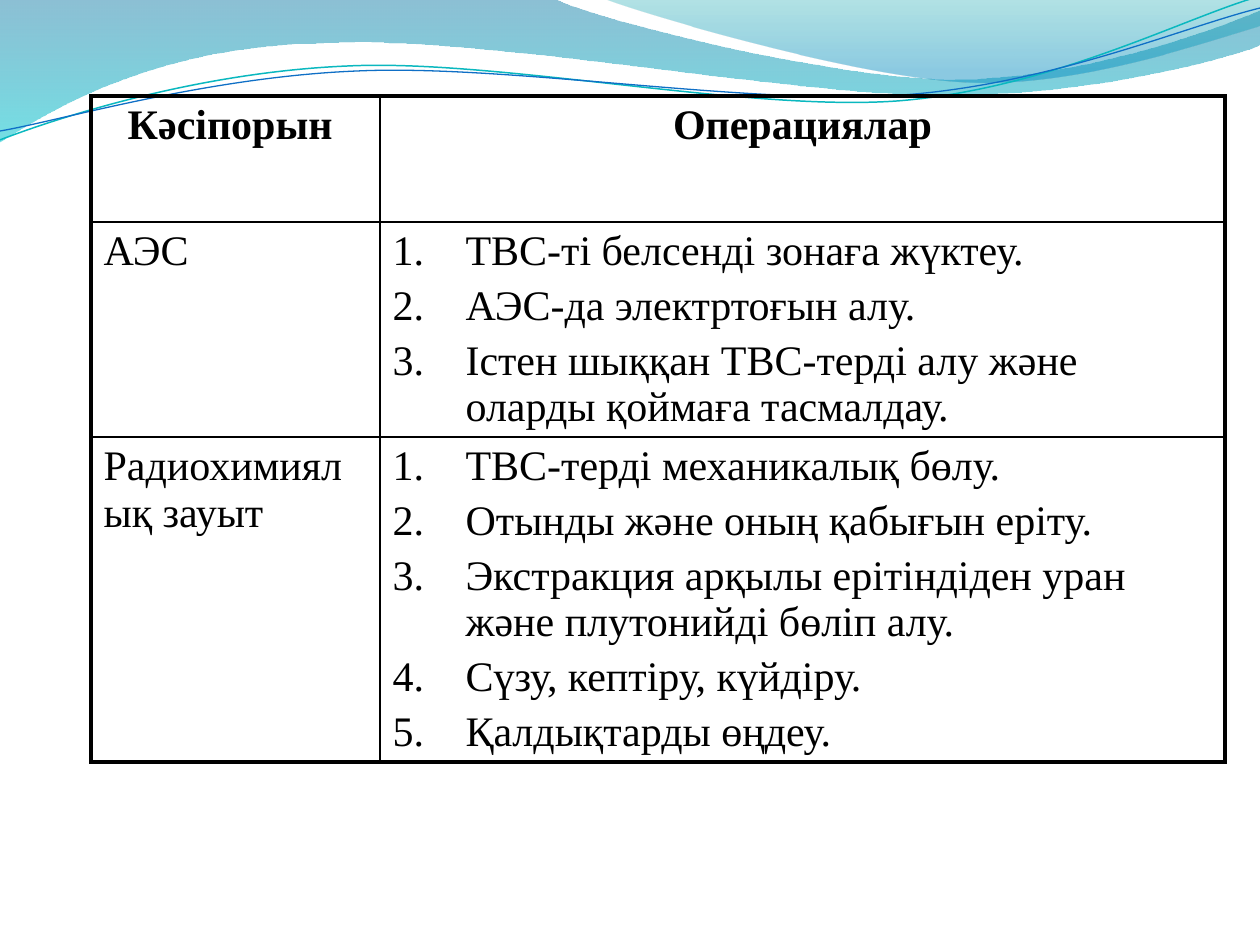
import math
from dataclasses import dataclass
from typing import Optional

from lxml import etree
from pptx import Presentation
from pptx import util as u
from pptx.dml.color import RGBColor
from pptx.enum import text
from pptx.oxml.ns import qn

EMU_PER_PX = 914400 / 126
BLACK = "000000"
FONT = {"name": "Times New Roman", "size": u.Pt(24)}
NUMBER_INDENT = 73


def px(value: float) -> int:
    return round(value * EMU_PER_PX)


def colour(value: str) -> RGBColor:
    return RGBColor.from_string(value)


@dataclass
class Stop:
    colour: str
    position: float
    opacity: int


@dataclass
class Wave:
    """Two numbers are a straight step, six are a cubic curve."""
    start: tuple
    steps: list
    stops: tuple = ()
    line: str = ""
    width: float = 0
    centre: Optional[tuple] = None
    rotation: float = 0


@dataclass
class Cell:
    lines: list
    header: bool = False
    numbered: bool = False


WAVES = [
    Wave((0, 0), [
        (554, -1), (600, 21, 837, 79, 955, 79), (1075, 79, 1207, 33, 1260, 11),
        (1261, 45), (1239, 55, 1096, 96, 940, 95), (784, 95, 481, 35, 324, 43),
        (163, 45, 58, 105, -1, 142), (0, 0)],
        stops=(Stop("0074A1", 0, 45), Stop("00C6CF", 1, 55))),
    Wave((604, -1), [
        (641, 14, 859, 78, 969, 82), (1079, 87, 1211, 40, 1260, 26), (1260, 0),
        (604, -1)],
        stops=(Stop("00A1A9", 0, 30), Stop("008BBF", 0.8, 45))),
    Wave((0, 140), [
        (60, 117, 199, 72, 349, 66), (498, 59, 747, 112, 898, 101),
        (1050, 89, 1182, 19, 1257, -3)],
        line="0AB8BF", width=0.85, centre=(629, 72), rotation=-2.7),
    Wave((0, 131), [
        (59, 121, 207, 77, 357, 71), (508, 64, 752, 106, 903, 95),
        (1053, 84, 1186, 26, 1260, 8)],
        line="0F6FC6", width=0.75, centre=(629, 74), rotation=-2.7),
]

TABLE_HEIGHT = 716
COLUMNS = [289, 845]
ROWS = [126, 137, 135]  # the lower rows grow with their text
CELLS = [
    [Cell(["Кәсіпорын "], header=True), Cell(["Операциялар"], header=True)],
    [Cell(["АЭС"]), Cell([
        "ТВС-ті белсенді зонаға жүктеу.",
        "АЭС-да электртоғын алу.",
        "Істен шыққан ТВС-терді алу және оларды қоймаға тасмалдау."],
        numbered=True)],
    [Cell(["Радиохимиялық зауыт"]), Cell([
        "ТВС-терді механикалық бөлу.",
        "Отынды және оның қабығын еріту.",
        "Экстракция арқылы ерітіндіден уран және плутонийді бөліп алу.",
        "Сүзу, кептіру, күйдіру.",
        "Қалдықтарды өңдеу."], numbered=True)],
]


def turn(point: tuple, centre: tuple, degrees: float) -> tuple:
    angle = math.radians(degrees)
    dx, dy = point[0] - centre[0], point[1] - centre[1]
    return (centre[0] + dx * math.cos(angle) - dy * math.sin(angle),
            centre[1] + dx * math.sin(angle) + dy * math.cos(angle))


def bend(shape, steps: list) -> None:
    """Join each three straight steps of a curve into one cubic step."""
    segments = iter(list(shape._element.iter(qn("a:lnTo"))))
    for step in steps:
        parts = [next(segments) for _ in range(len(step) // 2)]
        if len(parts) == 3:
            curve = etree.Element(qn("a:cubicBezTo"))
            parts[0].addprevious(curve)
            for part in parts:
                curve.append(part[0])
                part.getparent().remove(part)


def draw_wave(slide, wave: Wave) -> None:
    points = [wave.start] + [step[i:i + 2] for step in wave.steps
                             for i in range(0, len(step), 2)]
    if wave.centre:
        # Level the curve; the shape's own rotation tilts it again
        points = [turn(point, wave.centre, -wave.rotation) for point in points]
    points = [(px(x), px(y)) for x, y in points]
    builder = slide.shapes.build_freeform(*points[0], scale=1.0)
    builder.add_line_segments(points[1:], close=bool(wave.stops))
    shape = builder.convert_to_shape()
    bend(shape, wave.steps)
    shape.shadow.inherit = False
    shape.rotation = wave.rotation
    if wave.stops:
        shape.line.fill.background()
        shape.fill.gradient()
        shape.fill.gradient_angle = 270
        for target, stop in zip(shape.fill.gradient_stops, wave.stops):
            target.color.rgb = colour(stop.colour)
            target.position = stop.position
        tints = shape.fill._xPr.iter(qn("a:srgbClr"))
        for tint, stop in zip(tints, wave.stops):
            etree.SubElement(tint, qn("a:alpha"), val=str(stop.opacity * 1000))
    else:
        shape.fill.background()
        shape.line.color.rgb = colour(wave.line)
        shape.line.width = u.Pt(wave.width)


def draw_border(cell, side: str, width: float) -> None:
    line = etree.SubElement(cell._tc.get_or_add_tcPr(), qn(f"a:ln{side}"),
                            w=str(u.Pt(width)))
    fill = etree.SubElement(line, qn("a:solidFill"))
    etree.SubElement(fill, qn("a:srgbClr"), val=BLACK)


def write_cell(cell, content: Cell) -> None:
    frame = cell.text_frame
    for index, line in enumerate(content.lines):
        paragraph = frame.add_paragraph() if index else frame.paragraphs[0]
        if content.numbered:
            properties = paragraph._p.get_or_add_pPr()
            properties.set("marL", str(px(NUMBER_INDENT)))
            properties.set("indent", str(-px(NUMBER_INDENT)))
            etree.SubElement(properties, qn("a:buAutoNum"), type="arabicPeriod")
        if index:
            paragraph.space_before = u.Pt(4.8)
        if content.header:
            paragraph.alignment = text.PP_ALIGN.CENTER
        run = paragraph.add_run()
        run.text = line
        for name, value in {**FONT, "bold": content.header}.items():
            setattr(run.font, name, value)
        run.font.color.rgb = colour(BLACK)


def draw_table(slide, left: int, top: int) -> None:
    frame = slide.shapes.add_table(len(ROWS), len(COLUMNS), px(left), px(top),
                                   px(sum(COLUMNS)), px(TABLE_HEIGHT))
    table = frame.table
    table.first_row = table.horz_banding = False
    for column, width in zip(table.columns, COLUMNS):
        column.width = px(width)
    for row, height in zip(table.rows, ROWS):
        row.height = px(height)
    frame.height = px(TABLE_HEIGHT)
    for r, contents in enumerate(CELLS):
        for c, content in enumerate(contents):
            cell = table.cell(r, c)
            # Outer edges are heavy, inner ones thin
            outer = {"L": c == 0, "R": c == len(COLUMNS) - 1,
                     "T": r == 0, "B": r == len(ROWS) - 1}
            for side, heavy in outer.items():
                draw_border(cell, side, 2.25 if heavy else 1)
            cell.fill.background()
            write_cell(cell, content)


def main() -> None:
    presentation = Presentation()
    presentation.slide_width, presentation.slide_height = px(1260), px(945)
    slide = presentation.slides.add_slide(presentation.slide_layouts[6])
    # Wavy header
    for wave in WAVES:
        draw_wave(slide, wave)
    # Plants and their operations
    draw_table(slide, left=91, top=96)
    presentation.save("out.pptx")


if __name__ == "__main__":
    main()
